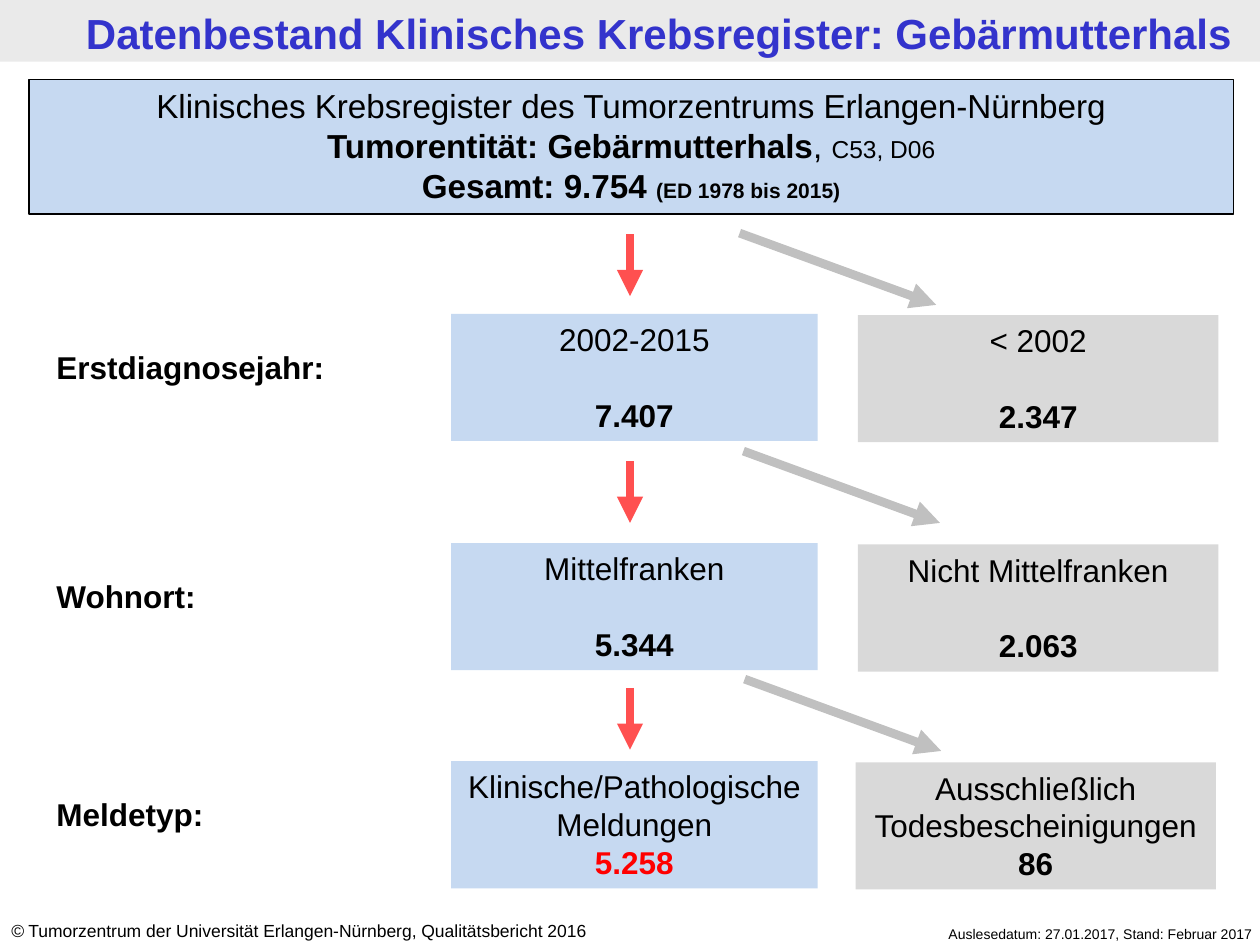
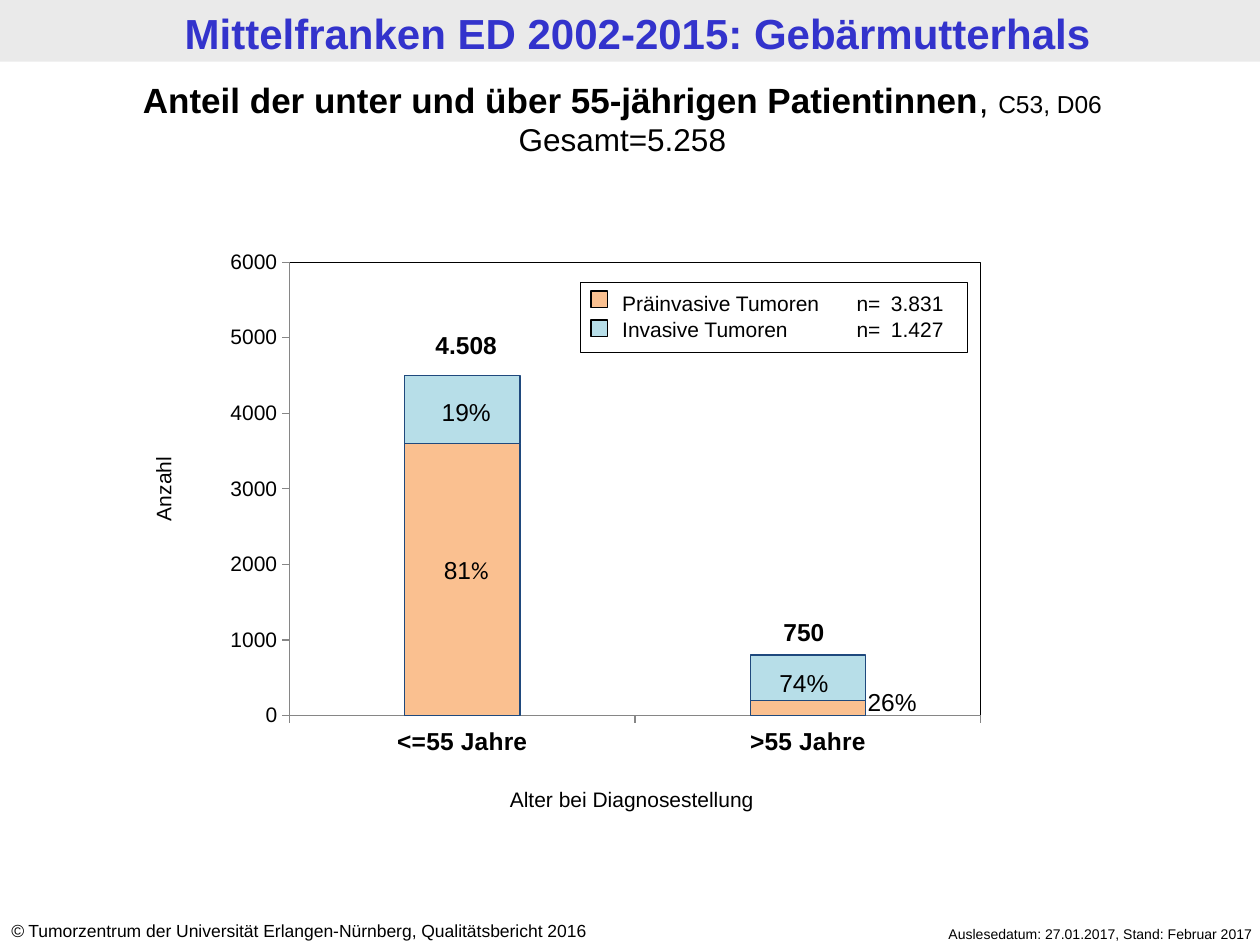
from lxml import etree
from pptx import Presentation
from pptx import util as u
from pptx.chart import data as chart_data
from pptx.dml import color
from pptx.enum import chart as ch, shapes, text
from pptx.oxml import ns, parse_xml

BLACK, RED, GREY_ARROW, RED_ARROW = "000000", "FF0000", "C0C0C0", "FF5050"
BAND, TITLE, KEPT, EXCLUDED = "EAEAEA", "3333CC", "C6D9F1", "D9D9D9"
PREINVASIVE, INVASIVE, BAR_EDGE, AXIS = "FAC090", "B7DEE8", "1F497D", "868686"
FONT = "Arial"
CENTER, LEFT, RIGHT = text.PP_ALIGN.CENTER, text.PP_ALIGN.LEFT, text.PP_ALIGN.RIGHT


def rgb(value):
    return color.RGBColor.from_string(value)


def style_line(line, value, width=0.75):
    line.color.rgb = rgb(value)
    line.width = u.Pt(width)


def style_font(font, size, bold=False, value=BLACK, name=FONT):
    font.size, font.bold, font.name = u.Pt(size), bold, name
    font.color.rgb = rgb(value)


def run(content, size, bold=False, value=BLACK, name=FONT, italic=False):
    return content, size, bold, value, name, italic


def write(frame, paragraphs, align=LEFT, gap=0, tabs=()):
    frame.word_wrap = True
    frame.vertical_anchor = text.MSO_ANCHOR.TOP
    for index, runs in enumerate(paragraphs):
        paragraph = frame.paragraphs[0] if index == 0 else frame.add_paragraph()
        paragraph.alignment = align
        if tabs:
            tab_list = etree.SubElement(paragraph._p.get_or_add_pPr(), ns.qn("a:tabLst"))
            for position, side in tabs:
                etree.SubElement(tab_list, ns.qn("a:tab"), pos=str(u.Inches(position)), algn=side)
        if index and gap:
            paragraph.space_before = u.Pt(gap)
        for content, size, bold, value, name, italic in runs:
            piece = paragraph.add_run()
            piece.text = content
            style_font(piece.font, size, bold, value, name)
            piece.font.italic = italic


def add_label(slide, left, top, width, height, paragraphs, align=CENTER, tabs=()):
    label = slide.shapes.add_textbox(*map(u.Inches, (left, top, width, height)))
    write(label.text_frame, paragraphs, align, tabs=tabs)
    return label


def add_box(slide, left, top, width, height, fill=None, edge=None):
    box = slide.shapes.add_shape(shapes.MSO_SHAPE.RECTANGLE,
                                 *map(u.Inches, (left, top, width, height)))
    box.shadow.inherit = False
    if fill:
        box.fill.solid()
        box.fill.fore_color.rgb = rgb(fill)
    else:
        box.fill.background()
    if edge:
        style_line(box.line, edge)
    else:
        box.line.fill.background()
    return box


def add_arrow(slide, start, end, value):
    arrow = slide.shapes.add_connector(shapes.MSO_CONNECTOR.STRAIGHT,
                                       *map(u.Inches, (*start, *end)))
    style_line(arrow.line, value, 5)
    etree.SubElement(arrow.line._get_or_add_ln(), ns.qn("a:tailEnd"), type="triangle")
    etree.SubElement(arrow._element.spPr, ns.qn("a:effectLst"))


def add_page(deck, title, left, width):
    slide = deck.slides.add_slide(deck.slide_layouts[6])
    add_box(slide, 0, 0, 10, 0.49, BAND)
    add_label(slide, left, 0.01, width, 0.49, [[run(title, 24, True, TITLE)]])
    add_label(slide, -0.01, 7.25, 5.24, 0.27, [[
        run("©", 10, italic=True),
        run(" Tumorzentrum der Universität Erlangen-Nürnberg, Qualitätsbericht 2016", 10)]], LEFT)
    add_label(slide, 6.65, 7.3, 3.39, 0.24,
              [[run("Auslesedatum: 27.01.2017, Stand: Februar 2017", 8)]], RIGHT)
    return slide


def add_count(slide, left, top, width, fill, group, count, gap, value=BLACK):
    box = add_box(slide, left, top, width, 1.01, fill)
    write(box.text_frame, [[run(group, 18)], [run(count, 18, True, value)]], CENTER, gap)


def add_step(slide, question, top, kept, excluded, arrow_top, branch, excluded_left=6.81,
             gap=21.6, value=BLACK):
    add_arrow(slide, (5, arrow_top), (5, arrow_top + 0.49), RED_ARROW)
    add_arrow(slide, branch, (branch[0] + 1.56, branch[1] + 0.57), GREY_ARROW)
    add_label(slide, 0.35, top + 0.22, 2.76, 0.4, [[run(question, 18, True)]], LEFT)
    add_count(slide, 3.58, top, 2.91, KEPT, *kept, gap, value)
    add_count(slide, excluded_left, top + 0.01, 2.86, EXCLUDED, *excluded, gap)


def build_registry(deck):
    slide = add_page(deck, "Datenbestand Klinisches Krebsregister: Gebärmutterhals", 0.45, 9.56)
    registry = add_box(slide, 0.23, 0.63, 9.56, 1.07, KEPT, BLACK)
    write(registry.text_frame, [
        [run("Klinisches Krebsregister des Tumorzentrums Erlangen-Nürnberg", 19)],
        [run("Tumorentität: Gebärmutterhals", 19, True), run(", ", 19), run("C53, D06", 14)],
        [run("Gesamt: 9.754 ", 19, True), run("(ED 1978 bis 2015)", 12, True)]], CENTER)
    add_step(slide, "Erstdiagnosejahr:", 2.49, ("2002-2015", "7.407"), ("< 2002", "2.347"),
             1.86, (5.87, 1.85))
    add_step(slide, "Wohnort:", 4.31, ("Mittelfranken", "5.344"),
             ("Nicht Mittelfranken", "2.063"), 3.66, (5.9, 3.58))
    add_step(slide, "Meldetyp:", 6.04, ("Klinische/Pathologische Meldungen", "5.258"),
             ("Ausschließlich Todesbescheinigungen", "86"), 5.46, (5.91, 5.39),
             6.79, 0, RED)


def frame_plot(chart):
    plot_area = chart._chartSpace.chart.plotArea
    for old in plot_area.findall(ns.qn("c:layout")):
        plot_area.remove(old)
    places = "".join(f'<c:{tag} val="{value}"/>' for tag, value in (
        ("layoutTarget", "inner"), ("xMode", "edge"), ("yMode", "edge"),
        ("x", 0.113), ("y", 0.142), ("w", 0.786), ("h", 0.772)))
    plot_area.insert(0, parse_xml(
        f'<c:layout {ns.nsdecls("c")}><c:manualLayout>{places}</c:manualLayout></c:layout>'))
    plot_area.append(parse_xml(
        f'<c:spPr {ns.nsdecls("c", "a")}><a:noFill/><a:ln w="9525"><a:solidFill>'
        f'<a:srgbClr val="{BLACK}"/></a:solidFill></a:ln></c:spPr>'))


def add_age_chart(slide):
    ages = chart_data.CategoryChartData()
    ages.categories = ["<=55 Jahre", ">55 Jahre"]
    ages.add_series("Präinvasive Tumoren", (3600, 200))
    ages.add_series("Invasive Tumoren", (900, 600))
    chart = slide.shapes.add_chart(ch.XL_CHART_TYPE.COLUMN_STACKED,
                                   *map(u.Inches, (1.51, 1.42, 6.98, 4.66)), ages).chart
    chart.has_legend = chart.has_title = False
    style_font(chart.font, 12)
    plot = chart.plots[0]
    plot.gap_width, plot.overlap, plot.vary_by_categories = 200, 100, False
    for tumours, fill in zip(plot.series, (PREINVASIVE, INVASIVE)):
        tumours.format.fill.solid()
        tumours.format.fill.fore_color.rgb = rgb(fill)
        style_line(tumours.format.line, BAR_EDGE)
    for axis, size, bold in ((chart.category_axis, 14, True), (chart.value_axis, 12, False)):
        axis.has_major_gridlines = False
        axis.major_tick_mark = ch.XL_TICK_MARK.OUTSIDE
        style_line(axis.format.line, AXIS)
        style_font(axis.tick_labels.font, size, bold)
    counts = chart.value_axis
    counts.minimum_scale, counts.maximum_scale, counts.major_unit = 0, 6000, 1000
    frame_plot(chart)


def add_legend(slide):
    rows = (("Präinvasive Tumoren", "3.831"), ("Invasive Tumoren", "1.427"))
    add_label(slide, 4.84, 2.26, 2.8, 0.5,
              [[run(f"{name}\tn=\t{count}", 12)] for name, count in rows],
              LEFT, ((1.86, "l"), (2.55, "r")))
    add_box(slide, 4.61, 2.24, 3.07, 0.56, edge=BLACK)
    for row, fill in enumerate((PREINVASIVE, INVASIVE)):
        add_box(slide, 4.69, 2.31 + 0.23 * row, 0.13, 0.13, fill, BLACK)


def build_age_groups(deck):
    slide = add_page(deck, "Mittelfranken ED 2002-2015: Gebärmutterhals", 0.06, 10)
    add_age_chart(slide)
    add_label(slide, 0, 0.57, 9.88, 0.74, [
        [run("Anteil der unter und über 55-jährigen Patientinnen", 20, True),
         run(", ", 20), run("C53, D06", 14)],
        [run("Gesamt=5.258", 18)]])
    add_label(slide, 3.19, 4.36, 1.02, 0.34, [[run("81", 14), run("%", 14, name="Calibri")]])
    for left, top, share, bold in ((3.19, 2.57, "4.508", True), (5.87, 4.85, "750", True),
                                   (3.19, 3.1, "19%", False), (5.87, 5.25, "74%", False),
                                   (6.57, 5.4, "26%", False)):
        add_label(slide, left, top, 1.02, 0.34, [[run(share, 14, bold)]])
    add_label(slide, 3.35, 6.19, 3.33, 0.3, [[run("Alter bei Diagnosestellung", 12)]])
    add_label(slide, -0.01, 3.73, 2.61, 0.3, [[run("Anzahl", 12)]]).rotation = 270
    add_legend(slide)


def main():
    deck = Presentation()
    deck.slide_width, deck.slide_height = u.Inches(10), u.Inches(7.5)
    build_registry(deck)
    build_age_groups(deck)
    deck.save("out.pptx")


if __name__ == "__main__":
    main()
